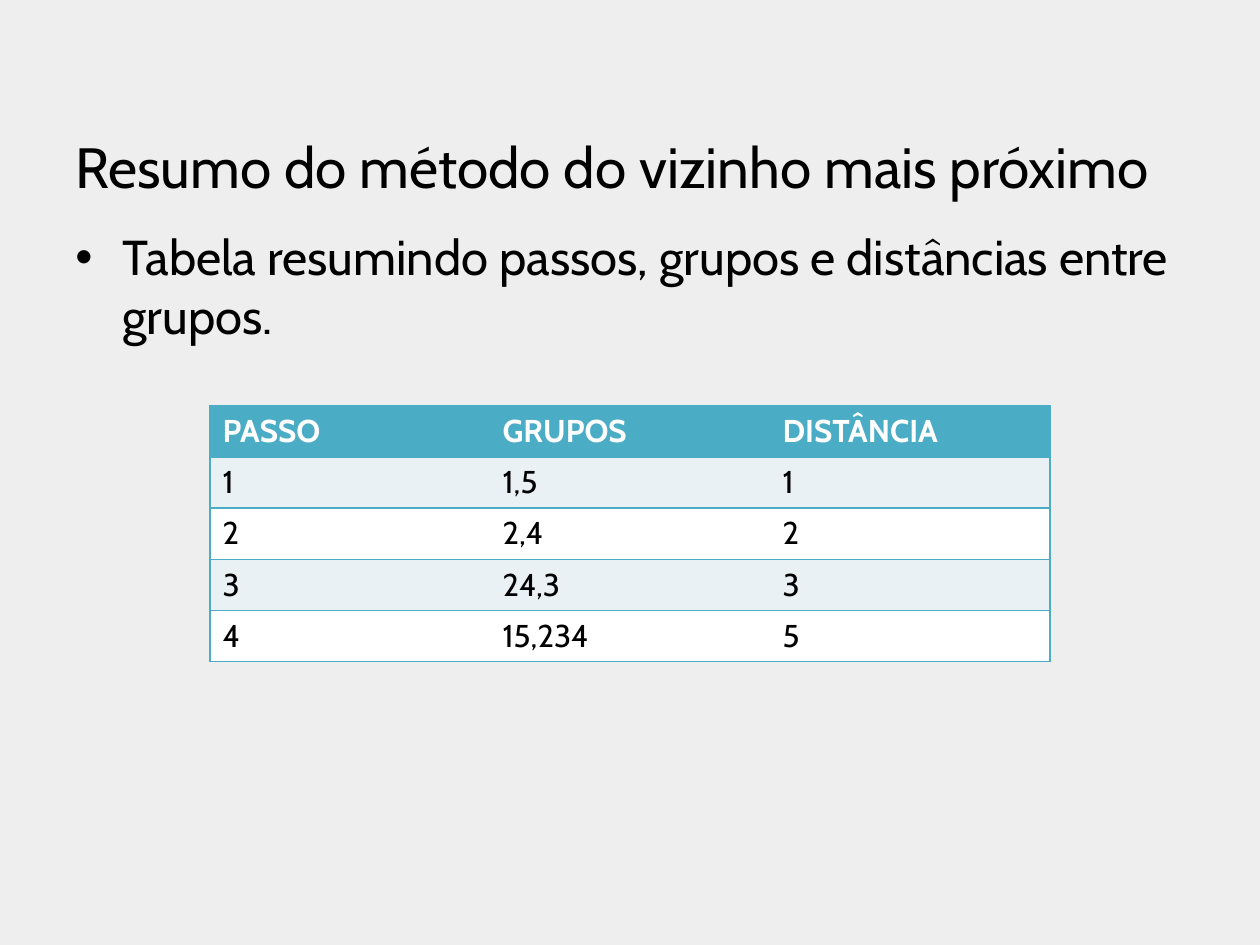
"""Build the nearest-neighbour summary slide with its table of steps."""
from dataclasses import dataclass

from lxml.etree import SubElement
from pptx import Presentation
from pptx.dml.color import RGBColor
from pptx.enum.text import MSO_ANCHOR
from pptx.oxml.ns import qn
from pptx.util import Pt


@dataclass(frozen=True)
class Theme:
    font: str = "Cabin"
    background: str = "EEEEEE"
    text: str = "000000"
    header_text: str = "FFFFFF"
    accent: str = "4BACC6"
    bands: tuple = ("FFFFFF", "E9F1F5")
    title: float = 32.4
    body: float = 28
    cell: float = 18


theme = Theme()


def write(tf, text, size, color=theme.text, bold=False, bullet=None, indent=27):
    p = tf.paragraphs[0]
    if bullet:
        pPr = p._p.get_or_add_pPr()
        pPr.set("marL", str(Pt(indent)))
        pPr.set("indent", str(-Pt(indent)))
        SubElement(pPr, qn("a:buFont"), typeface="Arial")
        SubElement(pPr, qn("a:buChar"), char=bullet)
    r = p.add_run()
    r.text = text
    r.font.name = theme.font
    r.font.size = Pt(size)
    r.font.bold = bold
    r.font.color.rgb = RGBColor.from_string(color)


def border(cell, side, color=None):
    ln = SubElement(cell._tc.get_or_add_tcPr(), qn(f"a:ln{side}"), w=str(Pt(1)))
    if color:
        fill = SubElement(ln, qn("a:solidFill"))
        SubElement(fill, qn("a:srgbClr"), val=color)
    else:
        SubElement(ln, qn("a:noFill"))


prs = Presentation()
prs.slide_width, prs.slide_height = Pt(720), Pt(540)
s = prs.slides.add_slide(prs.slide_layouts[6])
s.background.fill.solid()
s.background.fill.fore_color.rgb = RGBColor.from_string(theme.background)

title = s.shapes.add_textbox(Pt(36), Pt(28), Pt(648), Pt(90)).text_frame
title.word_wrap = True
title.vertical_anchor = MSO_ANCHOR.BOTTOM
write(title, "Resumo do método do vizinho mais próximo", theme.title)

body = s.shapes.add_textbox(Pt(36), Pt(126), Pt(648), Pt(356.4)).text_frame
body.word_wrap = True
write(body, "Tabela resumindo passos, grupos e distâncias entre grupos.", theme.body, bullet="•")

rows = [
    ("PASSO", "GRUPOS", "DISTÂNCIA"),
    ("1", "1,5", "1"),
    ("2", "2,4", "2"),
    ("3", "24,3", "3"),
    ("4", "15,234", "5"),
]
columns = len(rows[0])
table = s.shapes.add_table(len(rows), columns, Pt(120), Pt(232), Pt(480), Pt(146)).table
for i, row in enumerate(rows):
    header = i == 0
    fill = theme.accent if header else theme.bands[i % 2]
    color = theme.header_text if header else theme.text
    for j, text in enumerate(row):
        cell = table.cell(i, j)
        write(cell.text_frame, text, theme.cell, color=color, bold=header)
        border(cell, "L", theme.accent if j == 0 else None)
        border(cell, "R", theme.accent if j == columns - 1 else None)
        border(cell, "T", theme.accent)
        border(cell, "B", theme.accent)
        cell.fill.solid()
        cell.fill.fore_color.rgb = RGBColor.from_string(fill)

prs.save("out.pptx")
